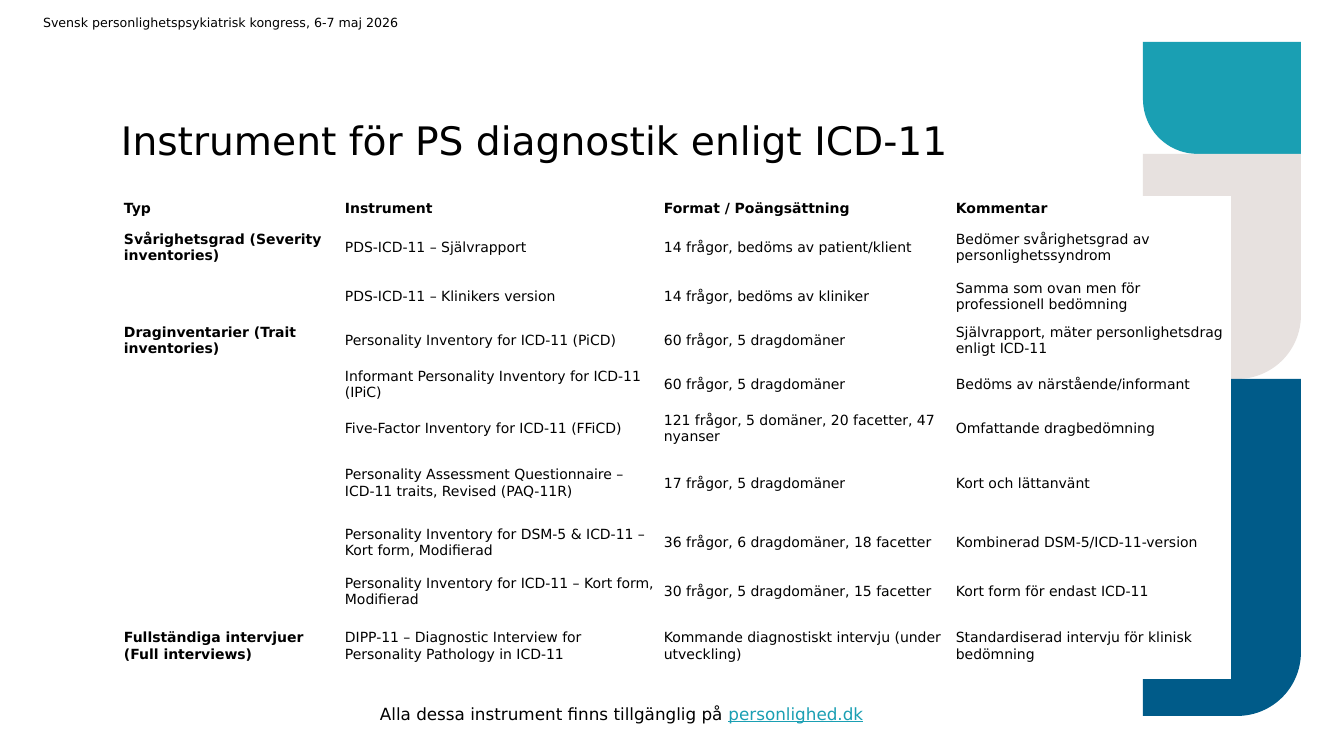
from pptx import Presentation
from pptx.dml.color import RGBColor
from pptx.enum.shapes import MSO_SHAPE as SHAPE
from pptx.enum.text import MSO_ANCHOR as ANCHOR, MSO_AUTO_SIZE as AUTO, PP_ALIGN as ALIGN
from pptx.oxml.ns import qn
from pptx.util import Emu, Pt

FONT = "DejaVu Sans"
BLACK = RGBColor(0x00, 0x00, 0x00)
WHITE = RGBColor(0xFF, 0xFF, 0xFF)
TEAL = RGBColor(0x1A, 0x9F, 0xB3)
SAND = RGBColor(0xE7, 0xE1, 0xDF)
BLUE = RGBColor(0x00, 0x5B, 0x89)

CONGRESS = "Svensk personlighetspsykiatrisk kongress, 6-7 maj 2026"
TITLE = "Instrument för PS diagnostik enligt ICD-11"
FOOTNOTE = "Alla dessa instrument finns tillgänglig på "
SITE = "personlighed.dk"
ROWS = [
    (24, "Typ", "Instrument", "Format / Poängsättning", "Kommentar"),
    (54, "Svårighetsgrad (Severity inventories)", "PDS-ICD-11 – Självrapport",
     "14 frågor, bedöms av patient/klient", "Bedömer svårighetsgrad av personlighetssyndrom"),
    (44, "", "PDS-ICD-11 – Klinikers version", "14 frågor, bedöms av kliniker",
     "Samma som ovan men för professionell bedömning"),
    (44, "Draginventarier (Trait inventories)", "Personality Inventory for ICD-11 (PiCD)",
     "60 frågor, 5 dragdomäner", "Självrapport, mäter personlighetsdrag enligt ICD-11"),
    (44, "", "Informant Personality Inventory for ICD-11 (IPiC)",
     "60 frågor, 5 dragdomäner", "Bedöms av närstående/informant"),
    (44, "", "Five-Factor Inventory for ICD-11 (FFiCD)",
     "121 frågor, 5 domäner, 20 facetter, 47 nyanser", "Omfattande dragbedömning"),
    (65, "", "Personality Assessment Questionnaire – ICD-11 traits, Revised (PAQ-11R)",
     "17 frågor, 5 dragdomäner", "Kort och lättanvänt"),
    (54, "", "Personality Inventory for DSM-5 & ICD-11 – Kort form, Modifierad",
     "36 frågor, 6 dragdomäner, 18 facetter", "Kombinerad DSM-5/ICD-11-version"),
    (44, "", "Personality Inventory for ICD-11 – Kort form, Modifierad",
     "30 frågor, 5 dragdomäner, 15 facetter", "Kort form för endast ICD-11"),
    (65, "Fullständiga intervjuer (Full interviews)",
     "DIPP-11 – Diagnostic Interview for Personality Pathology in ICD-11",
     "Kommande diagnostiskt intervju (under utveckling)",
     "Standardiserad intervju för klinisk bedömning"),
]
COL_WIDTHS = [221, 319, 292, 278]
BAND_LEFT, BAND_TOP, BAND_WIDTH = 1143, 42, 158
BANDS = [
    (112, TEAL, 0.489, ("flipH", "flipV")),
    (225, SAND, 0.403, ("flipV",)),
    (337, BLUE, 0.403, ("flipV",)),
]


def px(n):
    """Turn slide pixels into EMU."""
    return Emu(round(n * 914400 / 100.8))


def style(font, size, color=BLACK, bold=False):
    """Set the face, size, colour and weight of a font."""
    font.name, font.size, font.bold = FONT, Pt(size), bold
    font.color.rgb = color


def set_insets(frame, x, y):
    """Set equal side insets and equal top and bottom insets."""
    frame.margin_left = frame.margin_right = px(x)
    frame.margin_top = frame.margin_bottom = px(y)


def add_bands(slide):
    """Stack the rounded colour bands down the right edge."""
    top = BAND_TOP
    for height, color, radius, flips in BANDS:
        sp = slide.shapes.add_shape(SHAPE.ROUND_1_RECTANGLE, px(BAND_LEFT), px(top),
                                    px(BAND_WIDTH), px(height))
        sp.shadow.inherit = False
        sp.adjustments[0] = radius
        sp.fill.solid()
        sp.fill.fore_color.rgb = color
        sp.line.fill.background()
        xfrm = sp.element.spPr.find(qn("a:xfrm"))
        for flip in flips:
            xfrm.set(flip, "1")
        top += height


def add_title(slide):
    """Place and format the title."""
    sp = slide.shapes.title
    sp.left, sp.top, sp.width, sp.height = px(121), px(47), px(953), px(116)
    tf = sp.text_frame
    tf.text = TITLE
    tf.auto_size = AUTO.NONE
    tf.word_wrap = True
    tf.vertical_anchor = ANCHOR.BOTTOM
    set_insets(tf, 0, 0)
    p = tf.paragraphs[0]
    p.alignment = ALIGN.LEFT
    style(p.runs[0].font, 28)


def add_instruments(slide):
    """Add the table of instruments."""
    heights = [row[0] for row in ROWS]
    table = slide.shapes.add_table(len(ROWS), len(COL_WIDTHS), px(121), px(197),
                                   px(sum(COL_WIDTHS)), px(sum(heights))).table
    table.first_row = table.horz_banding = False
    for column, width in zip(table.columns, COL_WIDTHS):
        column.width = px(width)
    for i, (height, *texts) in enumerate(ROWS):
        table.rows[i].height = px(height)
        for j, text in enumerate(texts):
            cell = table.cell(i, j)
            cell.text = text
            cell.vertical_anchor = ANCHOR.MIDDLE
            set_insets(cell, 3, 1)
            cell.fill.solid()
            cell.fill.fore_color.rgb = WHITE
            style(cell.text_frame.paragraphs[0].font, 10, bold=i == 0 or j == 0)


def add_text(slide, box, text, size):
    """Add a wrapping text box and return its text frame."""
    tf = slide.shapes.add_textbox(*map(px, box)).text_frame
    tf.word_wrap = True
    tf.text = text
    style(tf.paragraphs[0].runs[0].font, size)
    return tf


def main():
    """Build and save the slide."""
    prs = Presentation()
    prs.slide_width, prs.slide_height = px(1344), px(756)
    slide = prs.slides.add_slide(prs.slide_layouts[5])
    add_bands(slide)
    add_title(slide)
    add_instruments(slide)

    tf = add_text(slide, (370, 699, 697, 30), FOOTNOTE, 12)
    r = tf.paragraphs[0].add_run()
    r.text = SITE
    style(r.font, 12, TEAL)
    r.font.underline = True

    tf = add_text(slide, (43, 15, 455, 15), CONGRESS, 9)
    tf.vertical_anchor = ANCHOR.MIDDLE
    set_insets(tf, 0, 0)
    prs.save("out.pptx")


if __name__ == "__main__":
    main()
